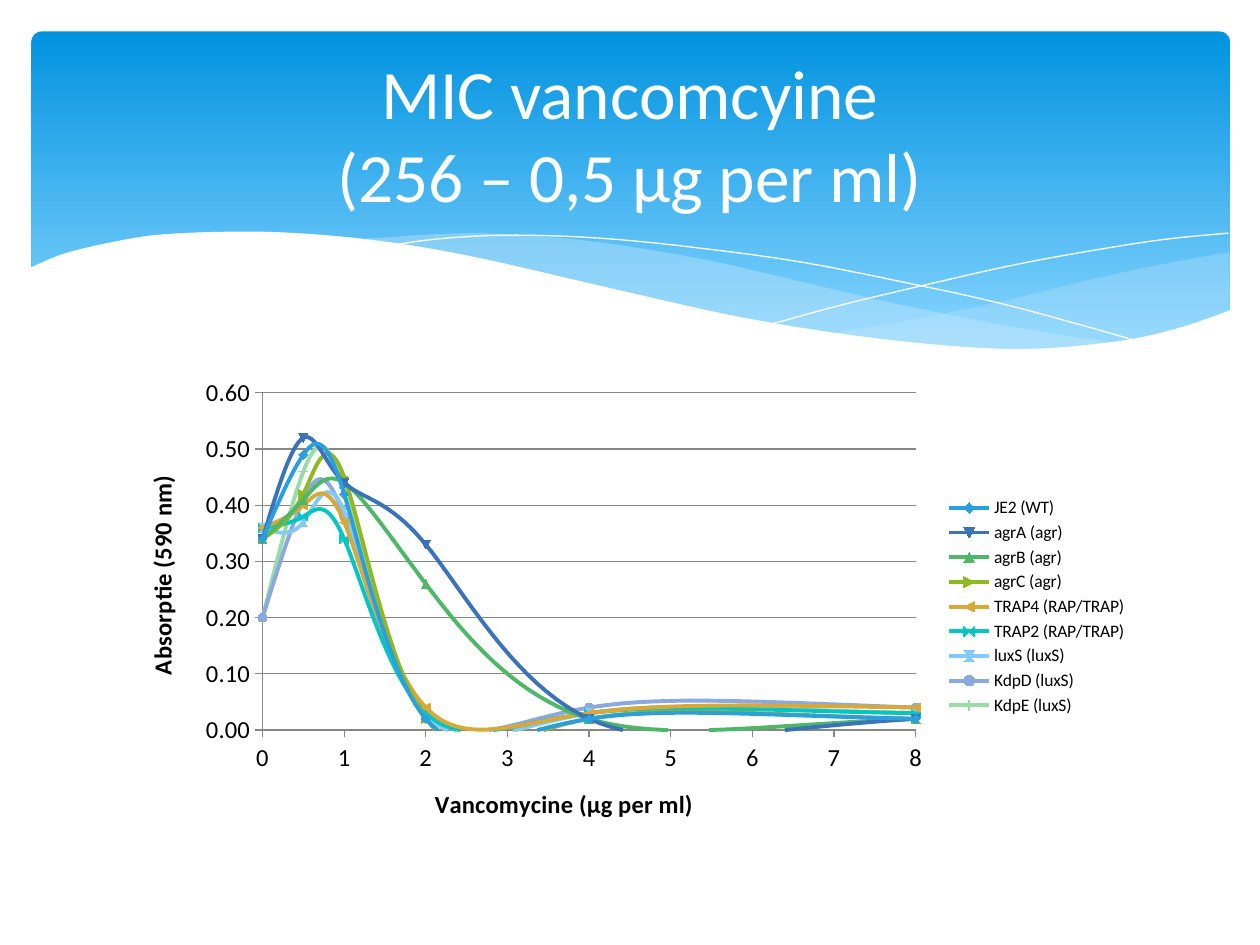
from dataclasses import dataclass
from typing import Optional

from lxml.etree import SubElement
from pptx import Presentation
from pptx.chart.data import XyChartData
from pptx.dml.color import RGBColor
from pptx.enum.chart import XL_CHART_TYPE as ChartType
from pptx.enum.chart import XL_LEGEND_POSITION as LegendPosition
from pptx.enum.chart import XL_MARKER_STYLE as MarkerStyle
from pptx.enum.chart import XL_TICK_MARK as TickMark
from pptx.enum.shapes import MSO_SHAPE as Preset
from pptx.enum.text import MSO_ANCHOR as Anchor
from pptx.enum.text import MSO_AUTO_SIZE as AutoSize
from pptx.enum.text import PP_ALIGN as Align
from pptx.oxml.ns import qn
from pptx.util import Inches, Pt

COLUMNS, ROWS = 100, 75
FONT = "Calibri"
COLORS = {
    "white": "FFFFFF", "black": "000000", "grid": "868686", "mist": "C6E7FC",
    "banner top": "0293E0", "banner bottom": "83D3FE",
}
CONCENTRATIONS = (256, 128, 64, 32, 16, 8, 4, 2, 1, 0.5, 0)

Points = tuple[tuple[float, float], ...]


@dataclass(frozen=True)
class Wave:
    """A smooth curve through knots; corners close it into an area."""
    knots: Points
    corners: Points = ()
    opacity: Optional[int] = None


@dataclass(frozen=True)
class Strain:
    name: str
    color: str
    absorptions: tuple[float, ...]


WAVES = (
    Wave(((97.6, 20), (92.1, 21), (86.1, 22.3), (80.5, 23.7), (75.3, 24.8), (70.6, 25.7), (66.1, 26.5),
          (70.5, 27.1), (74.5, 27.5), (78.1, 27.7), (81.4, 27.8), (85.4, 27.6), (88.9, 27.2),
          (92.1, 26.5), (94.9, 25.7), (97.6, 24.7)), ((97.6, 20),), 29),
    Wave(((89.3, 27.3), (83.7, 26.5), (77.5, 25.4), (70.6, 24), (62.9, 22.2), (56.9, 20.8), (51.4, 19.8),
          (46.5, 19.1), (42, 18.7), (38, 18.5), (34.4, 18.6), (31.3, 18.8), (28.6, 19.1),
          (34.2, 19.9), (40.4, 21.1), (44.9, 22.2), (53, 24), (60.1, 25.5), (66.5, 26.6),
          (72.2, 27.4), (77.3, 27.7), (81.8, 27.8), (85.7, 27.7), (89.3, 27.3)), (), 40),
    Wave(((30.9, 19.5), (34.4, 19), (38.7, 18.7), (43.3, 18.7), (48.9, 19), (55.6, 19.7),
          (63.6, 20.8), (72.7, 22.6), (79.5, 24.1), (86.9, 26.1), (90.7, 27.2))),
    Wave(((61.3, 25.7), (67.2, 24.1), (74.8, 22.3), (80.6, 21), (86.6, 19.9),
          (92.4, 19), (97.5, 18.5))),
    Wave(((97.7, 24.6), (94, 25.9), (89.9, 26.9), (85, 27.5), (80.9, 27.7), (76.1, 27.5), (70.8, 27),
          (64.8, 26.2), (57.9, 25), (50.3, 23.3), (44.7, 22), (39.1, 20.7), (34, 19.7),
          (29.2, 19), (25, 18.6), (21.1, 18.4), (17.7, 18.4), (14.6, 18.5), (11.9, 18.7),
          (9.5, 19.1), (6.7, 19.7), (4.6, 20.3), (2.3, 21.3)), ((2.3, 32.9), (97.7, 32.9)), 100),
)

STRAINS = (
    Strain("JE2 (WT)", "2B9FDE", (0, .02, .02, .02, .02, .02, .02, .02, .42, .49, .34)),
    Strain("agrA (agr)", "3B73B9", (.01, .02, .02, .02, .02, .02, .02, .33, .44, .52, .34)),
    Strain("agrB (agr)", "4FB768", (.01, .02, .02, .02, .02, .02, .02, .26, .44, .41, .34)),
    Strain("agrC (agr)", "91B722", (.01, .02, .02, .02, .02, .02, .02, .02, .45, .42, .34)),
    Strain("TRAP4 (RAP/TRAP)", "D8A937", (0, .03, .03, .03, .03, .04, .03, .04, .37, .4, .36)),
    Strain("TRAP2 (RAP/TRAP)", "04C5C1", (0, .02, .03, .03, .03, .03, .03, .03, .34, .38, .36)),
    Strain("luxS (luxS)", "83C9FE", (-.02, .02, .03, .03, .03, .03, .03, .03, .39, .37, .36)),
    Strain("KdpD (luxS)", "8BA8DF", (0, .01, .02, .02, .02, .04, .04, .03, .38, .41, .2)),
    Strain("KdpE (luxS)", "97DDA5", (0, .02, .03, .03, .03, .03, .03, .03, .43, .46, .2)),
)


def rgb(name: str) -> RGBColor:
    return RGBColor.from_string(COLORS.get(name, name))


def apply(target, values: dict) -> None:
    for attribute, value in values.items():
        setattr(target, attribute, value)


def style_font(font, size: float, color: str = "black", bold: bool = False) -> None:
    apply(font, {"name": FONT, "size": Pt(size), "bold": bold})
    font.color.rgb = rgb(color)


def cell_box(presentation, left, top, width, height) -> tuple[int, ...]:
    column, row = presentation.slide_width / COLUMNS, presentation.slide_height / ROWS
    return round(left * column), round(top * row), round(width * column), round(height * row)


def smooth(knots: Points, steps: int = 4) -> list[tuple[float, float]]:
    """Interpolate a Catmull-Rom curve through the knots."""
    padded = (knots[0], *knots, knots[-1])
    curve = [knots[0]]
    for a, b, c, d in zip(padded, padded[1:], padded[2:], padded[3:]):
        for t in (step / steps for step in range(1, steps + 1)):
            curve.append(tuple(
                (2 * q + (r - p) * t + (2 * p - 5 * q + 4 * r - s) * t ** 2
                 + (3 * q - p - 3 * r + s) * t ** 3) / 2
                for p, q, r, s in zip(a, b, c, d)))
    return curve


def draw_banner(presentation, slide) -> None:
    banner = slide.shapes.add_shape(Preset.ROUNDED_RECTANGLE, *cell_box(presentation, 2.5, 2.5, 95.1, 27))
    banner.adjustments[0] = 0.03
    banner.shadow.inherit = False
    banner.line.fill.background()
    banner.fill.gradient()
    banner.fill.gradient_angle = 270
    stops = zip(banner.fill.gradient_stops, (0, 0.9), ("banner top", "banner bottom"))
    for stop, position, color in stops:
        stop.position = position
        stop.color.rgb = rgb(color)


def draw_wave(presentation, slide, wave: Wave) -> None:
    points = [cell_box(presentation, *point, 0, 0)[:2] for point in (*smooth(wave.knots), *wave.corners)]
    is_area = wave.opacity is not None
    builder = slide.shapes.build_freeform(*points[0])
    builder.add_line_segments(points[1:], close=is_area)
    shape = builder.convert_to_shape()
    shape.shadow.inherit = False
    if not is_area:
        shape.fill.background()
        shape.line.color.rgb = rgb("white")
        shape.line.width = Pt(0)
        return
    shape.line.fill.background()
    shape.fill.solid()
    shape.fill.fore_color.rgb = rgb("white" if wave.opacity == 100 else "mist")
    if wave.opacity < 100:
        color = shape._element.spPr.find(f"{qn('a:solidFill')}/{qn('a:srgbClr')}")
        SubElement(color, qn("a:alpha"), val=str(wave.opacity * 1000))


def place_title(presentation, slide, text: str) -> None:
    title = slide.shapes.title
    apply(title, dict(zip(("left", "top", "width", "height"), cell_box(presentation, 5, 3.7, 90, 13.7))))
    slide.shapes._spTree.append(title._element)
    frame = title.text_frame
    frame.text = text
    apply(frame, {"vertical_anchor": Anchor.MIDDLE, "word_wrap": True, "auto_size": AutoSize.NONE})
    paragraph = frame.paragraphs[0]
    paragraph.alignment = Align.CENTER
    for run in paragraph.runs:
        style_font(run.font, 39.6, "white")


def format_axis(axis, title: str, maximum: float, unit: float, number_format: str, grid: bool) -> None:
    apply(axis, {
        "minimum_scale": 0, "maximum_scale": maximum, "major_unit": unit,
        "major_tick_mark": TickMark.OUTSIDE, "minor_tick_mark": TickMark.NONE,
        "has_major_gridlines": grid,
    })
    apply(axis.tick_labels, {"number_format": number_format, "number_format_is_linked": False})
    style_font(axis.tick_labels.font, 14)
    axis.axis_title.text_frame.text = title
    style_font(axis.axis_title.text_frame.paragraphs[0].runs[0].font, 14, bold=True)
    lines = [axis.format.line] + ([axis.major_gridlines.format.line] if grid else [])
    for line in lines:
        line.color.rgb = rgb("grid")
        line.width = Pt(0.75)


def set_plot_area(chart, **shares: float) -> None:
    """Fix the inner plot area as shares of the chart's size."""
    plot_area = chart._chartSpace.chart.plotArea
    layout = plot_area.find(qn("c:layout"))
    if layout is None:
        layout = SubElement(plot_area, qn("c:layout"))
        plot_area.insert(0, layout)
    manual = SubElement(layout, qn("c:manualLayout"))
    settings = {"layoutTarget": "inner", "xMode": "edge", "yMode": "edge", **shares}
    for tag, value in settings.items():
        SubElement(manual, qn(f"c:{tag}"), val=str(value))


def draw_chart(presentation, slide) -> None:
    data = XyChartData()
    for strain in STRAINS:
        series = data.add_series(strain.name)
        for concentration, absorption in zip(CONCENTRATIONS, strain.absorptions):
            series.add_data_point(concentration, absorption)
    chart = slide.shapes.add_chart(
        ChartType.XY_SCATTER_SMOOTH, *cell_box(presentation, 9.5, 29.3, 81, 37.7), data).chart
    apply(chart, {"has_title": False, "has_legend": True})
    style_font(chart.font, 10)
    apply(chart.legend, {"position": LegendPosition.RIGHT, "include_in_layout": False})
    style_font(chart.legend.font, 10)
    format_axis(chart.category_axis, "Vancomycine (µg per ml)", 8, 1, "General", False)
    format_axis(chart.value_axis, "Absorptie (590 nm)", 0.6, 0.1, "0.00", True)
    set_plot_area(chart, x=0.14, y=0.05, w=0.64, h=0.71)
    plot = chart.plots[0]
    plot.vary_by_categories = False
    for index, (series, strain) in enumerate(zip(plot.series, STRAINS), start=1):
        series._element.find(qn("c:idx")).set("val", str(index))  # selects the automatic marker
        series._element.get_or_add_smooth().val = True
        series.format.line.color.rgb = rgb(strain.color)
        series.format.line.width = Pt(2.25)
        series.marker.size = 5
    series.marker.style = MarkerStyle.PLUS


def main() -> None:
    presentation = Presentation()
    apply(presentation, {"slide_width": Inches(10), "slide_height": Inches(7.5)})
    slide = presentation.slides.add_slide(presentation.slide_layouts[5])
    draw_banner(presentation, slide)
    for wave in WAVES:
        draw_wave(presentation, slide, wave)
    place_title(presentation, slide, "MIC vancomcyine\v(256 – 0,5 µg per ml)")
    draw_chart(presentation, slide)
    presentation.save("out.pptx")


if __name__ == "__main__":
    main()
